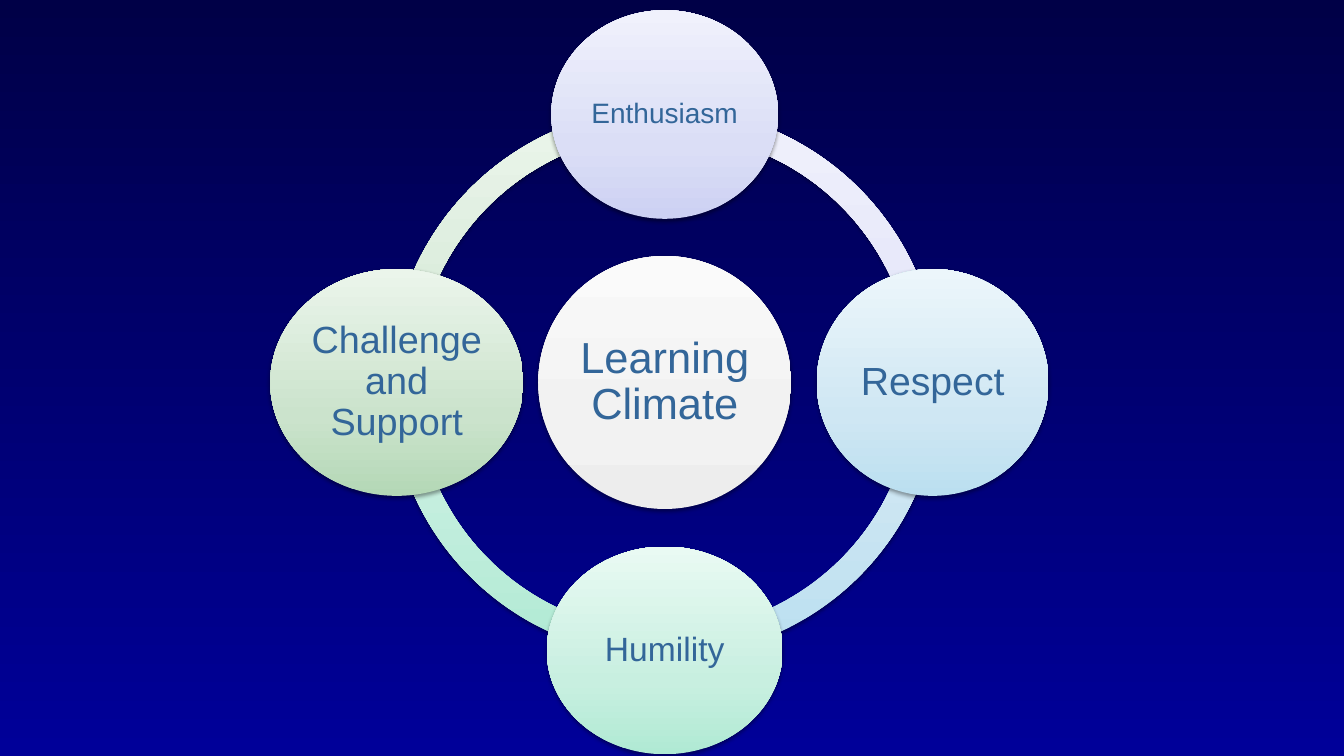
from copy import deepcopy

from lxml.etree import SubElement
from pptx import Presentation
from pptx.dml.color import RGBColor
from pptx.enum.shapes import MSO_SHAPE as SHAPE
from pptx.enum.text import MSO_ANCHOR as ANCHOR, PP_ALIGN as ALIGN
from pptx.oxml.ns import qn
from pptx.util import Pt

COLORS = {"text": "336699", "shadow": "000000", "top": "000047", "bottom": "000099"}
# Gradients from the lower to the upper edge
GRADIENTS = {
    "grey": ("EDEDED", "F2F2F2", "FAFAFA"),
    "lilac": ("CDD1F3", "DBDEF6", "F0F1FC"),
    "blue": ("BBDFF0", "CFE7F3", "ECF6FB"),
    "mint": ("B0EAD4", "C8EFE0", "E9FAF3"),
    "green": ("B4D8B6", "CBE3CC", "EBF5EB"),
}
CX, CY = 474.8, 273.2
ORBIT = 191.4
RING = 392.4
RING_WIDTH = 0.046
QUARTER = 54  # 90 degrees in adjustment units

# Text, size, colour, width, height, direction from the centre, arc start
NODES = [
    ("Enthusiasm", 20, "lilac", 162, 149, (0, -1), 3 * QUARTER),
    ("Respect", 28, "blue", 165.6, 162, (1, 0), 0),
    ("Humility", 24, "mint", 168.5, 148.3, (0, 1), QUARTER),
    ("Challenge and Support", 27, "green", 180.7, 162, (-1, 0), 2 * QUARTER),
]


def set_stops(fill, stops):
    for stop, (position, color) in zip(fill.gradient_stops, stops):
        stop.position = position
        stop.color.rgb = RGBColor.from_string(color)


def add_shadow(sp):
    sp.shadow.inherit = False
    effects = sp.element.spPr.find(qn("a:effectLst"))
    shadow = SubElement(effects, qn("a:outerShdw"), blurRad=str(Pt(3.1)),
                        dist=str(Pt(1.6)), dir="5400000", rotWithShape="0")
    color = SubElement(shadow, qn("a:srgbClr"), val=COLORS["shadow"])
    SubElement(color, qn("a:alpha"), val="38000")


def add_centred(s, kind, x, y, w, h, gradient):
    sp = s.shapes.add_shape(kind, Pt(x - w / 2), Pt(y - h / 2), Pt(w), Pt(h))
    sp.line.fill.background()
    sp.fill.gradient()
    sp.fill.gradient_angle = 90
    stops = sp.element.spPr.find(".//" + qn("a:gsLst"))
    stops.append(deepcopy(stops[0]))
    set_stops(sp.fill, zip((0, 0.35, 1), GRADIENTS[gradient]))
    add_shadow(sp)
    return sp


def add_arc(s, start, gradient):
    sp = add_centred(s, SHAPE.BLOCK_ARC, CX, CY, RING, RING, gradient)
    end = (start + QUARTER) % (4 * QUARTER)
    for i, value in enumerate((start, end, RING_WIDTH)):
        sp.adjustments[i] = value


def add_circle(s, text, size, gradient, w, h, direction=(0, 0)):
    dx, dy = direction
    sp = add_centred(s, SHAPE.OVAL, CX + dx * ORBIT, CY + dy * ORBIT, w, h, gradient)
    tf = sp.text_frame
    frame = {"word_wrap": True, "vertical_anchor": ANCHOR.MIDDLE}
    frame.update({f"margin_{side}": Pt(2.5) for side in ("left", "top", "right", "bottom")})
    p = tf.paragraphs[0]
    r = p.add_run()
    r.text = text
    formats = (
        (tf, frame),
        (p, {"alignment": ALIGN.CENTER, "line_spacing": 0.9}),
        (r.font, {"name": "Arial", "size": Pt(size)}),
    )
    for target, values in formats:
        for name, value in values.items():
            setattr(target, name, value)
    r.font.color.rgb = RGBColor.from_string(COLORS["text"])


def main():
    prs = Presentation()
    prs.slide_width, prs.slide_height = Pt(960), Pt(540)
    s = prs.slides.add_slide(prs.slide_layouts[6])

    # Background
    fill = s.background.fill
    fill.gradient()
    fill.gradient_angle = 270
    set_stops(fill, ((0, COLORS["top"]), (1, COLORS["bottom"])))

    # Ring
    for *_, gradient, _w, _h, _direction, start in reversed(NODES):
        add_arc(s, start, gradient)

    # Centre and surrounding circles
    add_circle(s, "Learning Climate", 31, "grey", 180.7, 180.7)
    for *node, _start in NODES:
        add_circle(s, *node)

    prs.save("out.pptx")


if __name__ == "__main__":
    main()
